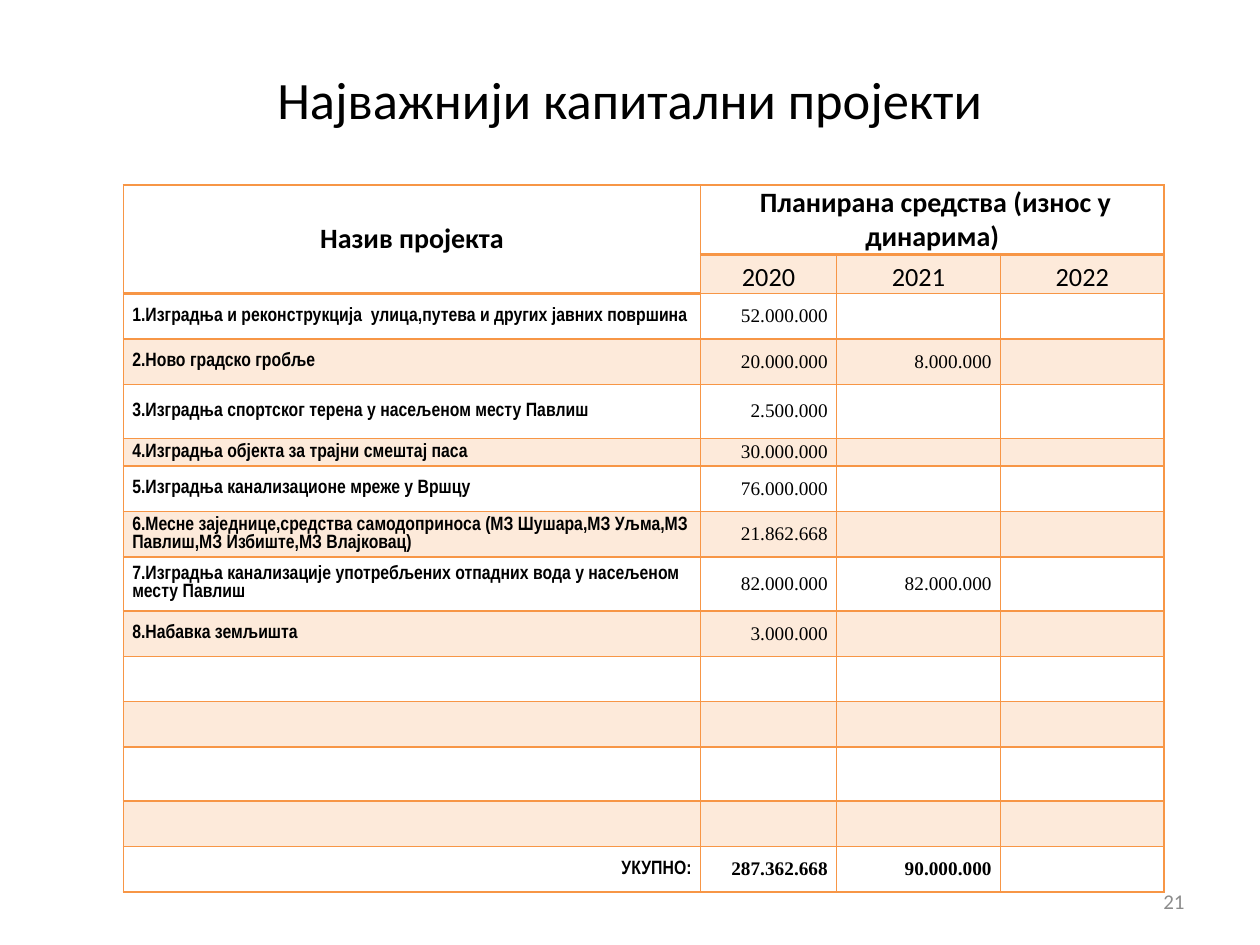
from lxml import etree
from pptx import Presentation
from pptx import util as u
from pptx.dml.color import RGBColor
from pptx.enum import text
from pptx.oxml.ns import qn

ORANGE, BLACK, GREY = "F79646", "000000", "8C8C8C"
LEFT, CENTER, RIGHT = text.PP_ALIGN.LEFT, text.PP_ALIGN.CENTER, text.PP_ALIGN.RIGHT
MIDDLE, BOTTOM = text.MSO_ANCHOR.MIDDLE, text.MSO_ANCHOR.BOTTOM

YEARS = ["2020", "2021", "2022"]
PROJECTS = [
    ("1.Изградња и реконструкција  улица,путева и других јавних површина", "52.000.000", ""),
    ("2.Ново градско гробље", "20.000.000", "8.000.000"),
    ("3.Изградња спортског терена у насељеном месту Павлиш", "2.500.000", ""),
    ("4.Изградња објекта за трајни смештај паса", "30.000.000", ""),
    ("5.Изградња канализационе мреже у Вршцу", "76.000.000", ""),
    ("6.Месне заједнице,средства самодоприноса (МЗ Шушара,МЗ Уљма,"
     "МЗ Павлиш,МЗ Избиште,МЗ Влајковац)", "21.862.668", ""),
    ("7.Изградња канализације употребљених отпадних вода у насељеном месту Павлиш",
     "82.000.000", "82.000.000"),
    ("8.Набавка земљишта", "3.000.000", ""),
] + [("", "", "")] * 4
TOTAL = ("УКУПНО:", "287.362.668", "90.000.000")
COLUMN_WIDTHS = [4.58, 1.08, 1.3, 1.3]
ROW_HEIGHTS = [0.55, 0.31, 0.36, 0.36, 0.43, 0.22, 0.36, 0.36, 0.43,
               0.36, 0.36, 0.36, 0.43, 0.36, 0.36]


def rgb(color):
    return RGBColor.from_string(color)


def write(paragraph, words, size, font, color=BLACK, bold=False, align=LEFT):
    paragraph.alignment = align
    run = paragraph.add_run()
    run.text = words
    run.font.size = u.Pt(size)
    run.font.name = font
    run.font.bold = bold
    run.font.color.rgb = rgb(color)


def add_label(slide, box, words, size, color, align):
    shape = slide.shapes.add_textbox(*map(u.Inches, box))
    frame = shape.text_frame
    frame.word_wrap = True
    frame.vertical_anchor = MIDDLE
    write(frame.paragraphs[0], words, size, "Calibri", color, align=align)


def set_borders(cell, top, bottom):
    """Draw all four sides; must run before the fill is set."""
    properties = cell._tc.get_or_add_tcPr()
    for side, width in (("lnL", 1), ("lnR", 1), ("lnT", top), ("lnB", bottom)):
        line = etree.SubElement(properties, qn(f"a:{side}"), w=str(u.Pt(width)))
        solid = etree.SubElement(line, qn("a:solidFill"))
        etree.SubElement(solid, qn("a:srgbClr"), val=ORANGE)


def set_fill(cell, tinted):
    if not tinted:
        cell.fill.background()
        return
    cell.fill.solid()
    cell.fill.fore_color.rgb = rgb(ORANGE)
    color = cell._tc.tcPr.find(qn("a:solidFill")).find(qn("a:srgbClr"))
    etree.SubElement(color, qn("a:alpha"), val="20000")


def style_cell(cell, row, column):
    cell.margin_left = cell.margin_right = u.Inches(0.07)
    cell.margin_top = cell.margin_bottom = 0
    cell.vertical_anchor = MIDDLE
    rule_row = 1 if column == 0 else 0  # row above the thick header rule
    set_borders(cell, 2 if row == rule_row + 1 else 1, 2 if row == rule_row else 1)
    set_fill(cell, row % 2 == 1 and not (row == 1 and column == 0))


def fill_header(table):
    table.cell(0, 0).merge(table.cell(1, 0))
    table.cell(0, 1).merge(table.cell(0, 3))
    headings = ["Назив пројекта", " Планирана средства (износ у динарима)"]
    for column, heading in enumerate(headings):
        write(table.cell(0, column).text_frame.paragraphs[0], heading, 16, "Calibri",
              bold=True, align=CENTER)
    table.cell(0, 1).vertical_anchor = BOTTOM
    for column, year in enumerate(YEARS, 1):
        cell = table.cell(1, column)
        cell.vertical_anchor = BOTTOM
        write(cell.text_frame.paragraphs[0], year, 15, "Calibri", align=CENTER)


def fill_row(table, row, values, is_total=False):
    for column, value in enumerate((*values, "")):
        paragraph = table.cell(row, column).text_frame.paragraphs[0]
        is_name = column == 0
        if value:
            write(paragraph, value, 11, "Arial Narrow" if is_name else "Times New Roman",
                  bold=is_name or is_total,
                  align=LEFT if is_name and not is_total else RIGHT)
        else:  # keeps an empty cell from stretching its row
            paragraph._p.get_or_add_endParaRPr().set("sz", "1100")


def add_project_table(slide, box):
    shape = slide.shapes.add_table(len(ROW_HEIGHTS), len(COLUMN_WIDTHS), *map(u.Inches, box))
    table = shape.table
    table.first_row = table.horz_banding = False
    for column, width in zip(table.columns, COLUMN_WIDTHS):
        column.width = u.Inches(width)
    for row, height in zip(table.rows, ROW_HEIGHTS):
        row.height = u.Inches(height)
    for row in range(len(ROW_HEIGHTS)):
        for column in range(len(COLUMN_WIDTHS)):
            style_cell(table.cell(row, column), row, column)
    fill_header(table)
    for row, project in enumerate(PROJECTS, 2):
        fill_row(table, row, project)
    fill_row(table, len(ROW_HEIGHTS) - 1, TOTAL, is_total=True)


def main():
    presentation = Presentation()
    presentation.slide_width = u.Inches(10)
    presentation.slide_height = u.Inches(7.5)
    slide = presentation.slides.add_slide(presentation.slide_layouts[6])
    add_project_table(slide, (0.98, 1.47, 8.27, 5.6))
    add_label(slide, (7.17, 6.95, 2.33, 0.4), "21", 12, GREY, RIGHT)
    add_label(slide, (0.5, 0.3, 9, 0.96), "Најважнији капитални пројекти", 30, BLACK, CENTER)
    presentation.save("out.pptx")


if __name__ == "__main__":
    main()
